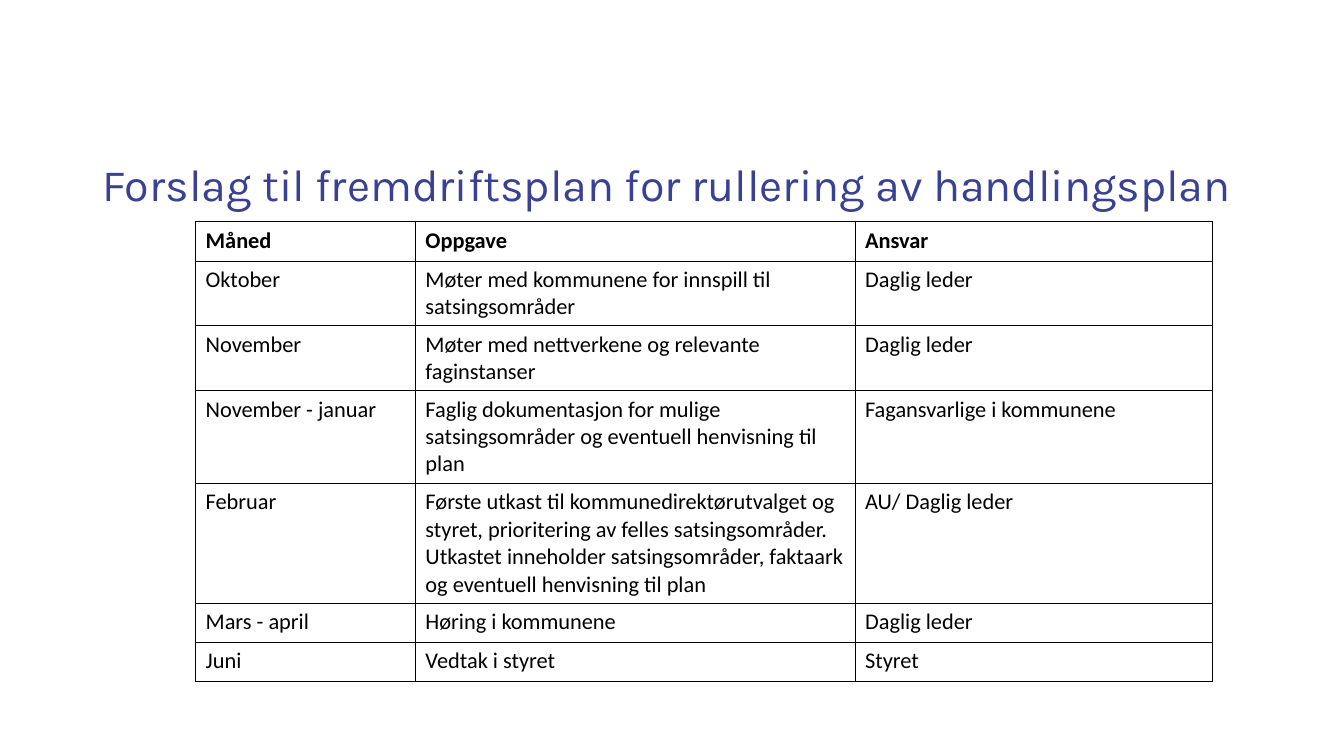
from lxml.etree import SubElement
from pptx import Presentation
from pptx.dml.color import RGBColor
from pptx.enum.text import MSO_ANCHOR
from pptx.oxml.ns import qn
from pptx.util import Inches, Pt

BLACK = RGBColor(0x00, 0x00, 0x00)
BLUE = RGBColor(0x38, 0x41, 0x94)

COLS = [2.18, 4.36, 3.55]
ROWS = [
    (0.39, "Måned", "Oppgave", "Ansvar"),
    (0.64, "Oktober", "Møter med kommunene for innspill til satsingsområder", "Daglig leder"),
    (0.64, "November", "Møter med nettverkene og relevante faginstanser", "Daglig leder"),
    (0.92, "November - januar",
     "Faglig dokumentasjon for mulige satsingsområder og eventuell henvisning til plan",
     "Fagansvarlige i kommunene"),
    (1.18, "Februar",
     "Første utkast til kommunedirektørutvalget og styret, prioritering av felles "
     "satsingsområder. Utkastet inneholder satsingsområder, faktaark og eventuell "
     "henvisning til plan",
     "AU/ Daglig leder"),
    (0.39, "Mars - april", "Høring i kommunene", "Daglig leder"),
    (0.39, "Juni", "Vedtak i styret", "Styret"),
]


class Deck:
    def __init__(self):
        self.show = Presentation()
        self.show.slide_width = Inches(13.33)
        self.show.slide_height = Inches(7.5)
        self.slide = self.show.slides.add_slide(self.show.slide_layouts[6])

    def style(self, par, font, size, color, bold=False):
        for run in par.runs:
            run.font.name = font
            run.font.size = Pt(size)
            run.font.color.rgb = color
            run.font.bold = bold

    def title(self, text, left, top, width, height):
        box = self.slide.shapes.add_textbox(
            Inches(left), Inches(top), Inches(width), Inches(height))
        frame = box.text_frame
        frame.word_wrap = True
        frame.vertical_anchor = MSO_ANCHOR.MIDDLE
        frame.text = text
        par = frame.paragraphs[0]
        par.line_spacing = 0.9
        self.style(par, "Karla", 32, BLUE)

    def border(self, cell):
        props = cell._tc.get_or_add_tcPr()
        for pos, side in enumerate(("lnL", "lnR", "lnT", "lnB")):
            line = props.makeelement(qn(f"a:{side}"), {"w": str(Pt(0.75))})
            fill = SubElement(line, qn("a:solidFill"))
            SubElement(fill, qn("a:srgbClr"), val=str(BLACK))
            props.insert(pos, line)

    def table(self, rows, cols, left, top):
        frame = self.slide.shapes.add_table(
            len(rows), len(cols), Inches(left), Inches(top),
            Inches(sum(cols)), Inches(sum(row[0] for row in rows)))
        grid = frame.table
        grid.first_row = False
        grid.horz_banding = False
        for col, width in zip(grid.columns, cols):
            col.width = Inches(width)
        for num, (height, *texts) in enumerate(rows):
            grid.rows[num].height = Inches(height)
            for cell, text in zip(grid.rows[num].cells, texts):
                cell.text_frame.text = text
                cell.fill.background()
                self.border(cell)
                self.style(cell.text_frame.paragraphs[0], "Calibri", 16, BLACK, num == 0)


def main():
    deck = Deck()
    deck.table(ROWS, COLS, 1.94, 2.2)
    deck.title("Forslag til fremdriftsplan for rullering av handlingsplan",
               0.92, 1.46, 11.5, 0.78)
    deck.show.save("out.pptx")


if __name__ == "__main__":
    main()
